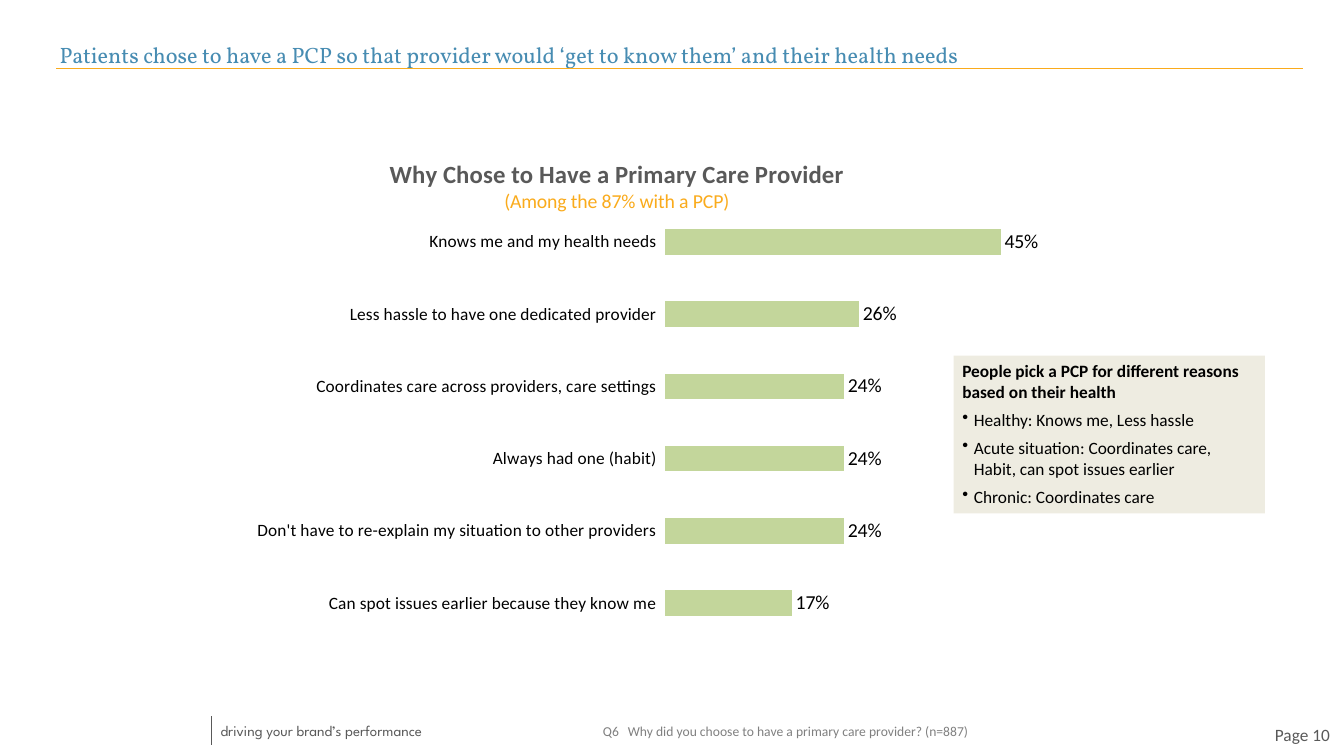
from dataclasses import dataclass
from typing import Any

from lxml.etree import SubElement
from pptx import Presentation
from pptx.chart.data import CategoryChartData as Data
from pptx.dml.color import RGBColor
from pptx.enum.chart import XL_CHART_TYPE as Kind, XL_LABEL_POSITION as Spot
from pptx.enum.shapes import MSO_CONNECTOR as Link, MSO_SHAPE as Form
from pptx.enum.text import MSO_ANCHOR as Anchor, MSO_AUTO_SIZE as Auto, PP_ALIGN as Align
from pptx.oxml import parse_xml
from pptx.oxml.ns import nsdecls, qn
from pptx.util import Cm, Pt

BLACK, GREY, PALE, GOLD = "000000", "595959", "808080", "FAAB1C"
BLUE, GREEN, CREAM = "478CB2", "C3D69B", "EEECE1"
SANS = "Calibri"


@dataclass
class Rule:
    start: tuple[float, float]
    end: tuple[float, float]
    hue: str
    width: float


@dataclass
class Para:
    text: str
    size: float
    hue: str = BLACK
    face: str = SANS
    bold: bool = False
    align: Align = Align.LEFT
    after: float = 0
    hang: float = 0
    mark: str = ""


@dataclass
class Box:
    place: tuple[float, float, float, float]
    paras: list[Para]
    pad: tuple[float, float] = (0.25, 0.13)
    anchor: Anchor = Anchor.TOP
    wrap: bool = True
    fill: str = ""


def tint(code: str) -> RGBColor:
    return RGBColor.from_string(code)


def apply(target: Any, values: dict[str, Any]) -> None:
    for name, value in values.items():
        setattr(target, name, value)


def style(font: Any, size: float, hue: str, face: str = SANS, bold: bool = False) -> None:
    apply(font, {"size": Pt(size), "name": face, "bold": bold})
    font.color.rgb = tint(hue)


def write(frame: Any, box: Box) -> None:
    side, edge = map(Cm, box.pad)
    apply(frame, {
        "auto_size": Auto.NONE, "word_wrap": box.wrap, "vertical_anchor": box.anchor,
        "margin_left": side, "margin_right": side, "margin_top": edge, "margin_bottom": edge,
    })
    for i, item in enumerate(box.paras):
        para = frame.add_paragraph() if i else frame.paragraphs[0]
        apply(para, {"alignment": item.align, "space_before": Pt(0), "space_after": Pt(item.after)})
        if item.hang:
            props = para._p.get_or_add_pPr()
            props.set("marL", str(Cm(item.hang)))
            props.set("indent", str(-Cm(item.hang)))
            if item.mark:
                SubElement(props, qn("a:buChar"), char=item.mark)
        run = para.add_run()
        run.text = item.text
        style(run.font, item.size, item.hue, item.face, item.bold)


def add_box(slide: Any, box: Box) -> None:
    place = map(Cm, box.place)
    if box.fill:
        shape = slide.shapes.add_shape(Form.RECTANGLE, *place)
        shape.shadow.inherit = False
        shape.fill.solid()
        shape.fill.fore_color.rgb = tint(box.fill)
        shape.line.fill.background()
    else:
        shape = slide.shapes.add_textbox(*place)
    write(shape.text_frame, box)


def add_rule(slide: Any, rule: Rule) -> None:
    line = slide.shapes.add_connector(Link.STRAIGHT, *map(Cm, rule.start + rule.end))
    line.line.color.rgb = tint(rule.hue)
    line.line.width = Pt(rule.width)
    SubElement(line._element.spPr, qn("a:effectLst"))


def layout(x: float, y: float, size: tuple[float, float] | None = None) -> Any:
    marks = {"xMode": "edge", "yMode": "edge", "x": x, "y": y}
    if size:
        marks = {"layoutTarget": "inner"} | marks | {"w": size[0], "h": size[1]}
    body = "".join(f'<c:{tag} val="{value}"/>' for tag, value in marks.items())
    return parse_xml(f'<c:layout {nsdecls("c")}><c:manualLayout>{body}</c:manualLayout></c:layout>')


def add_bars(slide: Any, place: tuple[float, ...], heads: list[Para], rows: dict[str, float]) -> None:
    data = Data(number_format="0%")
    data.categories = list(rows)
    data.add_series("Series 1", list(rows.values()))
    chart = slide.shapes.add_chart(Kind.BAR_CLUSTERED, *map(Cm, place), data).chart
    chart.has_legend = False
    style(chart.font, 10, BLACK)

    frame = chart.chart_title.text_frame
    for i, head in enumerate(heads):
        para = frame.add_paragraph() if i else frame.paragraphs[0]
        run = para.add_run()
        run.text = head.text
        style(run.font, head.size, head.hue, head.face, head.bold)
    title = chart.chart_title
    title.include_in_layout = False
    title._element.find(qn("c:tx")).addnext(layout(0.32, 0.01))

    area = chart._chartSpace.chart.plotArea
    for old in area.findall(qn("c:layout")):
        area.remove(old)
    area.insert(0, layout(0.556, 0.131, (0.43, 0.869)))

    cats, vals = chart.category_axis, chart.value_axis
    cats.reverse_order = True
    cats.format.line.fill.background()
    style(cats.tick_labels.font, 14, BLACK)
    apply(vals, {"minimum_scale": 0, "maximum_scale": 0.5,
                 "has_major_gridlines": False, "visible": False})

    plot = chart.plots[0]
    apply(plot, {"gap_width": 182, "vary_by_categories": False, "has_data_labels": True})
    fill = plot.series[0].format.fill
    fill.solid()
    fill.fore_color.rgb = tint(GREEN)
    labels = plot.data_labels
    apply(labels, {"show_value": True, "number_format": "0%",
                   "number_format_is_linked": False, "position": Spot.OUTSIDE_END})
    style(labels.font, 16, BLACK)


RULES = [
    Rule((1.6, 1.96), (37.21, 1.96), GOLD, 1),
    Rule((6.05, 20.45), (6.05, 21.29), GREY, 0.75),
]
TITLE = Box((1.42, 0.94, 35.76, 1.14), [Para(
    "Patients chose to have a PCP so that provider would ‘get to know them’ and their health needs",
    18, BLUE, "Vollkorn")], (0.28, 0.15), Anchor.BOTTOM)
POINTS = [
    "Healthy: Knows me, Less hassle",
    "Acute situation: Coordinates care, Habit, can spot issues earlier",
    "Chronic: Coordinates care",
]
BOXES = [
    Box((6.05, 20.47, 7.49, 0.76),
        [Para("driving your brand’s performance", 12, GREY, "League Spartan")], wrap=False),
    Box((34.93, 20.57, 3.33, 0.84), [Para("Page 10", 14, GREY, align=Align.RIGHT)],
        (0.28, 0.15), Anchor.MIDDLE),
    Box((16.97, 20.52, 12.17, 0.74), [Para(
        "Q6\tWhy did you choose to have a primary care provider? (n=887)", 11, PALE, hang=0.71)]),
    Box((27.23, 10.16, 8.89, 4.5),
        [Para("People pick a PCP for different reasons based on their health", 14, bold=True, after=6)]
        + [Para(text, 14, after=6, hang=0.33, mark="•") for text in POINTS], fill=CREAM),
]
HEADS = [
    Para("Why Chose to Have a Primary Care Provider", 20, GREY, bold=True),
    Para("(Among the 87% with a PCP)", 16, GOLD),
]
ROWS = {
    "Knows me and my health needs": 0.45,
    "Less hassle to have one dedicated provider": 0.26,
    "Coordinates care across providers, care settings": 0.24,
    "Always had one (habit)": 0.24,
    "Don't have to re-explain my situation to other providers": 0.24,
    "Can spot issues earlier because they know me": 0.17,
}


def main() -> None:
    deck = Presentation()
    apply(deck, {"slide_width": Cm(38.38), "slide_height": Cm(21.59)})
    slide = deck.slides.add_slide(deck.slide_layouts[5])
    title = slide.shapes.title
    apply(title, dict(zip(("left", "top", "width", "height"), map(Cm, TITLE.place))))
    write(title.text_frame, TITLE)
    for rule in RULES:
        add_rule(slide, rule)
    add_bars(slide, (5.23, 4.01, 24.77, 14.25), HEADS, ROWS)
    for box in BOXES:
        add_box(slide, box)
    deck.save("out.pptx")


if __name__ == "__main__":
    main()
